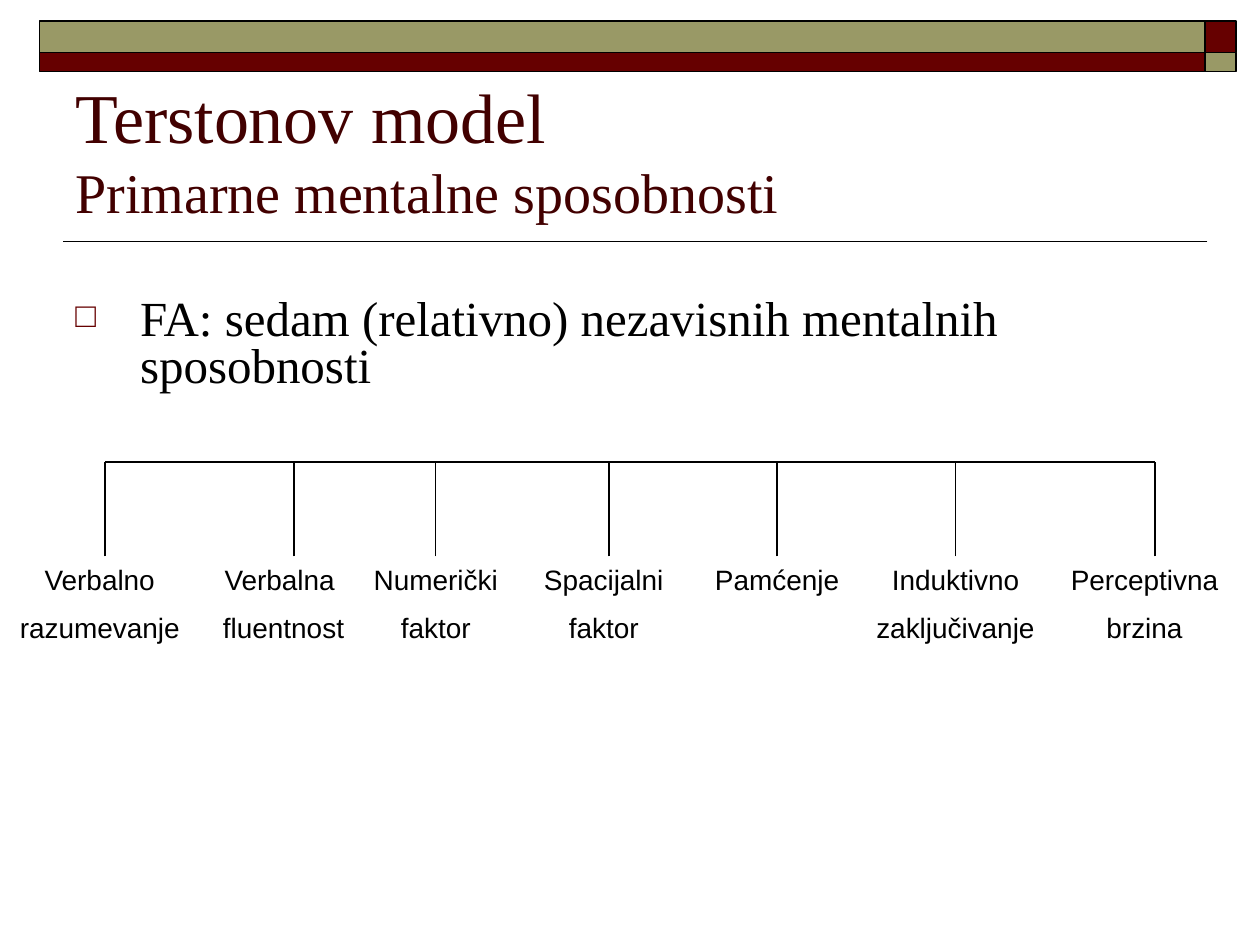
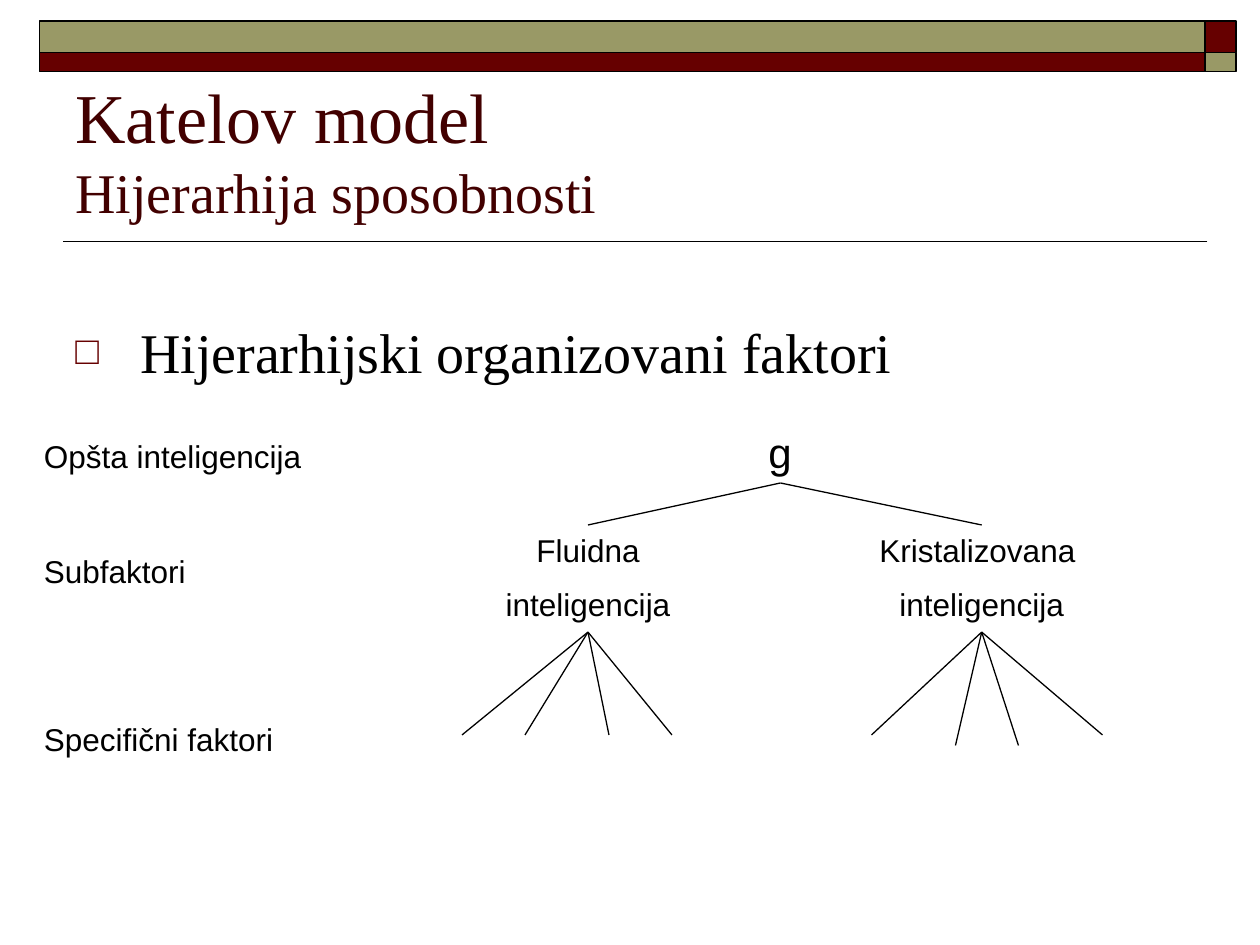
from lxml.etree import SubElement
from pptx import Presentation
from pptx.dml.color import RGBColor
from pptx.enum.shapes import MSO_CONNECTOR as Connector, MSO_SHAPE as Shape
from pptx.enum.text import MSO_ANCHOR as Anchor, MSO_AUTO_SIZE as AutoSize, PP_ALIGN as Align
from pptx.oxml.ns import qn
from pptx.util import Pt

COLORS = {"ink": "000000", "title": "420000", "maroon": "660000", "olive": "999966"}
HEADING_FONT = "Times New Roman"
LABEL_FONT = "Arial"
TOP, BOTTOM = 0, 2


def color(name):
    return RGBColor.from_string(COLORS[name])


class SlideBuilder:
    def __init__(self, deck):
        self.deck = deck
        self.page = None

    def new_page(self, heading, subheading):
        self.page = self.deck.slides.add_slide(self.deck.slide_layouts[6])
        self.line((690, 138), (36, 138), weight=1)
        self.band(688.5, 12, 18, 18, "maroon")
        self.band(22.5, 12, 666, 18, "olive")
        self.band(22.5, 30, 666, 11, "maroon")
        self.band(688.5, 30, 18, 11, "olive")
        box = self.text(36, 42, 648, 90, [f"{heading}\v{subheading}"], 40, HEADING_FONT, "title")
        box.text_frame.vertical_anchor = Anchor.BOTTOM
        box.text_frame.paragraphs[0].runs[1].font.size = Pt(32)

    def band(self, left, top, width, height, fill):
        shape = self.page.shapes.add_shape(Shape.RECTANGLE, Pt(left), Pt(top), Pt(width), Pt(height))
        shape.shadow.inherit = False
        shape.fill.solid()
        shape.fill.fore_color.rgb = color(fill)
        shape.line.color.rgb = color("ink")
        shape.line.width = Pt(1)

    def line(self, start, end, weight=0.75, begin_at=None, end_at=None):
        connector = self.page.shapes.add_connector(Connector.STRAIGHT, *map(Pt, start + end))
        connector.line.color.rgb = color("ink")
        connector.line.width = Pt(weight)
        SubElement(connector._element.spPr, qn("a:effectLst"))
        if begin_at:
            connector.begin_connect(*begin_at)
        if end_at:
            connector.end_connect(*end_at)

    def text(self, left, top, width, height, lines, size, font, ink="ink", align=Align.LEFT):
        box = self.page.shapes.add_textbox(Pt(left), Pt(top), Pt(width), Pt(height))
        frame = box.text_frame
        frame.word_wrap = True
        for index, content in enumerate(lines):
            para = frame.add_paragraph() if index else frame.paragraphs[0]
            para.text = content
            para.alignment = align
            for span in para.runs:
                span.font.size = Pt(size)
                span.font.name = font
                span.font.color.rgb = color(ink)
        return box

    def space_before(self, para, percent):
        spacing = SubElement(para._p.get_or_add_pPr(), qn("a:spcBef"))
        SubElement(spacing, qn("a:spcPct"), val=str(percent * 1000))

    def label(self, left, top, width, height, lines, size, align=Align.CENTER):
        box = self.text(left, top, width, height, lines, size, LABEL_FONT, align=align)
        box.text_frame.auto_size = AutoSize.SHAPE_TO_FIT_TEXT
        for para in box.text_frame.paragraphs:
            self.space_before(para, 50)
        return box

    def bullet(self, top, height, content, size, line_spacing=1.0):
        box = self.text(36, top, 648, height, [content], size, HEADING_FONT)
        para = box.text_frame.paragraphs[0]
        para.line_spacing = line_spacing
        self.space_before(para, 20)
        properties = para._p.get_or_add_pPr()
        properties.set("marL", str(Pt(37)))
        properties.set("indent", str(-Pt(37)))
        tint = SubElement(properties, qn("a:buClr"))
        SubElement(tint, qn("a:srgbClr"), val=COLORS["maroon"])
        SubElement(properties, qn("a:buSzPct"), val="70000")
        SubElement(properties, qn("a:buFont"), typeface=LABEL_FONT)
        SubElement(properties, qn("a:buChar"), char="□")


def build_primary_abilities(builder):
    builder.new_page("Terstonov model", "Primarne mentalne sposobnosti")
    builder.bullet(167, 63, "FA: sedam (relativno) nezavisnih mentalnih sposobnosti", 28, 0.8)
    rail, label_top = 264, 318
    abilities = [
        (0, 114, 60, ["Verbalno", "razumevanje"]),
        (114, 96, 168, ["Verbalna ", "fluentnost"]),
        (204, 90, 249, ["Numerički", "faktor"]),
        (300, 90, 348, ["Spacijalni", "faktor"]),
        (396, 96, 444, ["Pamćenje"]),
        (492, 108, 546, ["Induktivno", "zaključivanje"]),
        (600, 108, 660, ["Perceptivna", "brzina"]),
    ]
    builder.line((abilities[0][2], rail), (abilities[-1][2], rail))
    for left, width, stem, lines in abilities:
        height = 55.4 if len(lines) == 2 else 26.6
        box = builder.label(left, label_top, width, height, lines, 16)
        centered = stem == left + width / 2
        builder.line((stem, label_top), (stem, rail), begin_at=(box, TOP) if centered else None)


def build_hierarchy(builder):
    builder.new_page("Katelov model", "Hijerarhija sposobnosti")
    builder.bullet(178, 57, "Hijerarhijski organizovani faktori", 32)
    general = builder.text(432, 240, 28, 36, ["g"], 24, LABEL_FONT)
    general.text_frame.word_wrap = False
    general.text_frame.auto_size = AutoSize.SHAPE_TO_FIT_TEXT
    levels = [
        (246, 174, "Opšta inteligencija"),
        (312, 174, "Subfaktori"),
        (408, 162, "Specifični faktori"),
    ]
    for top, width, level in levels:
        builder.label(18, top, width, 29, [level], 18, Align.LEFT)
    subfactors = [
        (270, 132, "Fluidna", [(264, 420), (300, 420), (348, 420), (384, 420)]),
        (492, 138, "Kristalizovana ", [(498, 420), (546, 426), (582, 426), (630, 420)]),
    ]
    top, height = 300, 61.2
    for left, width, name, tips in subfactors:
        box = builder.label(left, top, width, height, [name, "inteligencija"], 18)
        center = left + width / 2
        builder.line((446, 276), (center, top), begin_at=(general, BOTTOM), end_at=(box, TOP))
        for tip in tips:
            builder.line((center, top + height), tip, begin_at=(box, BOTTOM))


def main():
    deck = Presentation()
    deck.slide_width, deck.slide_height = Pt(720), Pt(540)
    builder = SlideBuilder(deck)
    build_primary_abilities(builder)
    build_hierarchy(builder)
    deck.save("out.pptx")


if __name__ == "__main__":
    main()
